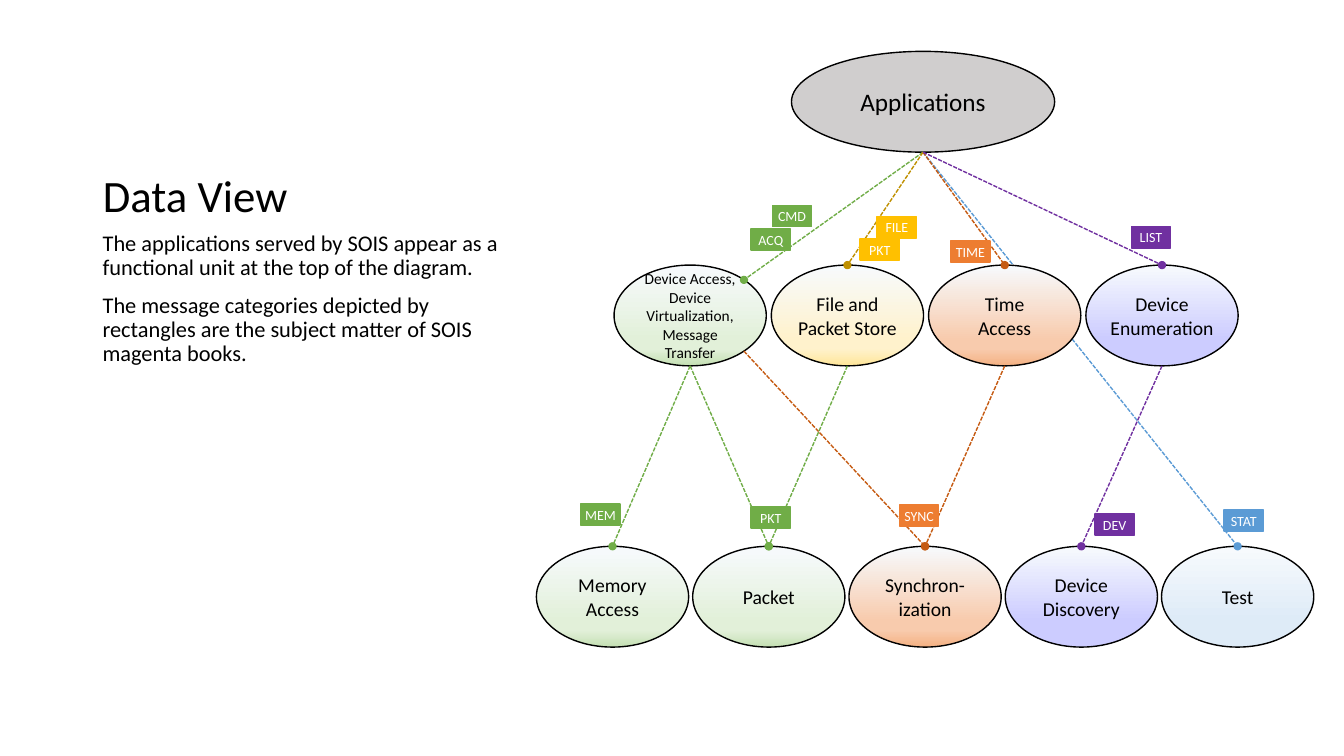
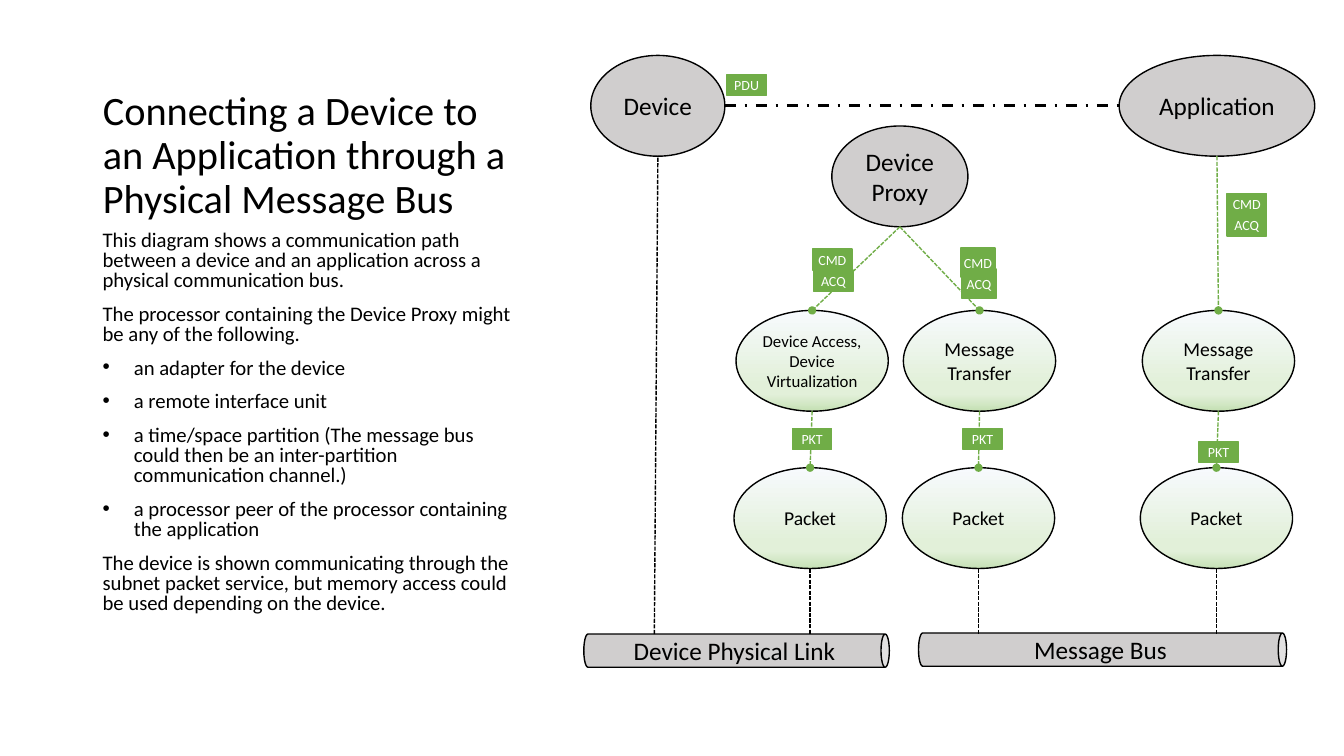
from dataclasses import dataclass, field

from lxml.etree import SubElement
from pptx import Presentation
from pptx.dml.color import RGBColor
from pptx.enum.dml import MSO_LINE
from pptx.enum.shapes import MSO_CONNECTOR, MSO_SHAPE
from pptx.enum.text import MSO_ANCHOR, MSO_AUTO_SIZE, PP_ALIGN
from pptx.oxml.ns import qn
from pptx.util import Inches, Pt


@dataclass(frozen=True)
class Theme:
    """Colours, type sizes and shared measures of the slides."""

    font: str = "Calibri"
    black: str = "000000"
    white: str = "FFFFFF"
    grey: str = "D0CECE"
    green: str = "70AD47"
    gold: str = "FFC000"
    dark_gold: str = "BF9000"
    orange: str = "ED7D31"
    rust: str = "C55A11"
    purple: str = "7030A0"
    blue: str = "5B9BD5"
    node_top: str = "F7FAFD"
    node_tints: dict = field(default_factory=lambda: {
        "green": ("E2F0D9", "C5E0B4"),
        "gold": ("FFF2CC", "FFE699"),
        "orange": ("F8CBAD", "F4B183"),
        "purple": ("CCCCFF", "CCCCFF"),
        "blue": ("DEEBF7", "DEEBF7"),
    })
    actor_size: float = 18
    node_size: float = 14
    tag_size: float = 10
    node_width: float = 1.51
    node_height: float = 1.0
    tag_box: tuple = (0.39, 0.21)
    pipe_height: float = 0.33
    bullet_indent: float = 0.31


THEME = Theme()
SITES = {
    "top": (0.5, 0), "bottom": (0.5, 1), "left": (0, 0.5), "right": (1, 0.5),
    "top right": (0.8536, 0.1464), "bottom right": (0.8536, 0.8536),
}


def apply(target, values):
    """Set every attribute named in a dict of format values."""
    for name, value in values.items():
        setattr(target, name, value)


def write(paragraph, text, size, color, **layout):
    """Put one formatted run into a paragraph."""
    run = paragraph.add_run()
    run.text = text
    apply(run.font, {"name": THEME.font, "size": Pt(size), "bold": False})
    run.font.color.rgb = RGBColor.from_string(color)
    apply(paragraph, layout)


def add_label(shape, text, size, color, inset):
    """Centre a label inside a shape."""
    frame = shape.text_frame
    apply(frame, {
        "word_wrap": True, "vertical_anchor": MSO_ANCHOR.MIDDLE,
        "margin_left": Inches(inset), "margin_right": Inches(inset),
    })
    write(frame.paragraphs[0], text, size, color, alignment=PP_ALIGN.CENTER)


def add_form(slide, kind, box, fill, outline):
    """Add a flat preset shape with a one point outline."""
    form = slide.shapes.add_shape(kind, *(Inches(length) for length in box))
    form.shadow.inherit = False
    form.fill.solid()
    form.fill.fore_color.rgb = RGBColor.from_string(fill)
    form.line.color.rgb = RGBColor.from_string(outline)
    form.line.width = Pt(1)
    return form


def add_actor(slide, text, left, top, width):
    """Add a grey ellipse for an application or a device."""
    actor = add_form(slide, MSO_SHAPE.OVAL, (left, top, width, THEME.node_height),
                     THEME.grey, THEME.black)
    add_label(actor, text, THEME.actor_size, THEME.black, 0.1)
    return actor


def add_node(slide, text, left, top, tint, size=THEME.node_size, inset=0):
    """Add a service ellipse with a vertical gradient."""
    box = (left, top, THEME.node_width, THEME.node_height)
    node = add_form(slide, MSO_SHAPE.OVAL, box, THEME.node_top, THEME.black)
    node.fill.gradient()
    node.fill.gradient_angle = 270
    stops = node.element.spPr.find(".//" + qn("a:gsLst"))
    stops.clear()
    middle, end = THEME.node_tints[tint]
    for percent, color in ((0, THEME.node_top), (74, middle), (83, middle), (100, end)):
        stop = SubElement(stops, qn("a:gs"), pos=str(percent * 1000))
        SubElement(stop, qn("a:srgbClr"), val=color)
    add_label(node, text, size, THEME.black, inset)
    return node


def add_tag(slide, text, left, top, color, box=THEME.tag_box):
    """Add a small rectangle that names a message category."""
    tag = add_form(slide, MSO_SHAPE.RECTANGLE, (left, top, *box), color, color)
    add_label(tag, text, THEME.tag_size, THEME.white, 0)


def add_pipe(slide, text, left, top, length):
    """Add a lying cylinder with upright text."""
    height = THEME.pipe_height
    box = (left + (length - height) / 2, top - (length - height) / 2, height, length)
    pipe = add_form(slide, MSO_SHAPE.CAN, box, THEME.grey, THEME.black)
    pipe.rotation = 90
    add_label(pipe, text, THEME.actor_size, THEME.black, 0.1)
    pipe.element.txBody.bodyPr.set("vert", "vert270")


def site(shape, name):
    """Return a named point on the outline of an ellipse."""
    across, down = SITES[name]
    return (round(shape.left + across * shape.width),
            round(shape.top + down * shape.height))


def add_link(slide, start, end, color, dot=True, dash=MSO_LINE.SQUARE_DOT, width=1):
    """Add a dashed line that may end in a dot."""
    link = slide.shapes.add_connector(MSO_CONNECTOR.STRAIGHT, *start, *end)
    link.line.color.rgb = RGBColor.from_string(color)
    apply(link.line, {"width": Pt(width), "dash_style": dash})
    properties = link.element.spPr
    if dot:
        SubElement(properties.find(qn("a:ln")), qn("a:tailEnd"), type="oval")
    SubElement(properties, qn("a:effectLst"))


def add_bullet(paragraph):
    """Give a paragraph a hanging bullet."""
    properties = paragraph._p.get_or_add_pPr()
    indent = Inches(THEME.bullet_indent)
    properties.set("marL", str(indent))
    properties.set("indent", str(-indent))
    SubElement(properties, qn("a:buFont"), typeface="Arial")
    SubElement(properties, qn("a:buChar"), char="•")


def start_slide(deck, heading, heading_size, body, body_size, spacing):
    """Add a slide with its title and the text column on the left."""
    slide = deck.slides.add_slide(deck.slide_layouts[5])
    title = slide.shapes.title
    apply(title, {"left": Inches(0.92), "top": Inches(0.5),
                  "width": Inches(4.3), "height": Inches(1.75)})
    apply(title.text_frame, {"word_wrap": True, "auto_size": MSO_AUTO_SIZE.NONE,
                             "vertical_anchor": MSO_ANCHOR.BOTTOM})
    write(title.text_frame.paragraphs[0], heading, heading_size, THEME.black,
          alignment=PP_ALIGN.LEFT, line_spacing=0.9)

    column = slide.shapes.add_textbox(Inches(0.92), Inches(2.25), Inches(4.3), Inches(4.17))
    frame = column.text_frame
    frame.word_wrap = True
    for index, (text, bulleted) in enumerate(body):
        paragraph = frame.add_paragraph() if index else frame.paragraphs[0]
        write(paragraph, text, body_size, THEME.black,
              line_spacing=spacing, space_before=Pt(10))
        if bulleted:
            add_bullet(paragraph)
    return slide


def build_data_view(deck):
    """Build the slide on services and their message categories."""
    slide = start_slide(deck, "Data View", 32, [
        ("The applications served by SOIS appear as a functional unit "
         "at the top of the diagram.", False),
        ("The message categories depicted by rectangles are the subject matter "
         "of SOIS magenta books.", False),
    ], 16, 0.9)
    subnet_left, subnet_top, subnet_pitch = 5.32, 5.42, 1.55
    service_left, service_top, service_pitch = 6.09, 2.63, 1.56

    test = add_node(slide, "Test", subnet_left + 4 * subnet_pitch, subnet_top, "blue")
    applications = add_actor(slide, "Applications", 7.85, 0.51, 2.61)
    source = site(applications, "bottom")
    add_link(slide, source, site(test, "top"), THEME.blue)

    services = [
        add_node(slide, text, service_left + column * service_pitch, service_top,
                 tint, size, inset)
        for column, (text, tint, size, inset) in enumerate([
            ("Device Access, Device Virtualization, Message Transfer", "green", 11, 0),
            ("File and Packet Store", "gold", THEME.node_size, 0),
            ("Time Access", "orange", THEME.node_size, 0.1),
            ("Device Enumeration", "purple", THEME.node_size, 0),
        ])
    ]
    subnets = [
        add_node(slide, text, subnet_left + column * subnet_pitch, subnet_top, tint)
        for column, (text, tint) in enumerate([
            ("Memory Access", "green"), ("Packet", "green"),
            ("Synchron-ization", "orange"), ("Device Discovery", "purple"),
        ])
    ]
    access, store, time, enumeration = services
    memory, packet, synchronization, discovery = subnets

    for service, end, color in [
        (time, "top", THEME.rust), (access, "top right", THEME.green),
        (store, "top", THEME.dark_gold), (enumeration, "top", THEME.purple),
    ]:
        add_link(slide, source, site(service, end), color)
    for service, start, subnet, color in [
        (time, "bottom", synchronization, THEME.rust),
        (access, "bottom right", synchronization, THEME.rust),
        (access, "bottom", memory, THEME.green),
        (access, "bottom", packet, THEME.green),
        (store, "bottom", packet, THEME.green),
        (enumeration, "bottom", discovery, THEME.purple),
    ]:
        add_link(slide, site(service, start), site(subnet, "top"), color)

    for text, left, top, color in [
        ("FILE", 8.7, 2.15, THEME.gold), ("TIME", 9.43, 2.39, THEME.orange),
        ("SYNC", 8.92, 5.01, THEME.orange), ("LIST", 11.22, 2.25, THEME.purple),
        ("DEV", 10.86, 5.1, THEME.purple), ("STAT", 12.14, 5.06, THEME.blue),
        ("PKT", 7.45, 5.03, THEME.green), ("MEM", 5.76, 5, THEME.green),
        ("CMD", 7.66, 2.04, THEME.green), ("ACQ", 7.45, 2.27, THEME.green),
        ("PKT", 8.53, 2.37, THEME.gold),
    ]:
        add_tag(slide, text, left, top, color)


def build_message_bus(deck):
    """Build the slide on the path from a device to an application."""
    slide = start_slide(
        deck, "Connecting a Device to an Application through a Physical Message Bus", 28.8, [
            ("This diagram shows a communication path between a device and an "
             "application across a physical communication bus.", False),
            ("The processor containing the Device Proxy might be any of the following.", False),
            ("an adapter for the device", True),
            ("a remote interface unit", True),
            ("a time/space partition (The message bus could then be an "
             "inter-partition communication channel.)", True),
            ("a processor peer of the processor containing the application", True),
            ("The device is shown communicating through the subnet packet service, "
             "but memory access could be used depending on the device.", False),
        ], 14.8, 0.8)
    pipe_top = 6.29
    device = add_actor(slide, "Device", 5.86, 0.55, 1.33)
    proxy = add_actor(slide, "Device Proxy", 8.25, 1.25, 1.35)
    application = add_actor(slide, "Application", 11.1, 0.55, 1.94)
    add_pipe(slide, "Device Physical Link", 5.79, pipe_top, 3.03)
    add_pipe(slide, "Message Bus", 9.11, 6.28, 3.65)

    for actor, text, size, service_left, packet_left in [
        (proxy, "Device Access, Device Virtualization", 12, 7.3, 7.28),
        (proxy, "Message Transfer", THEME.node_size, 8.96, 8.95),
        (application, "Message Transfer", THEME.node_size, 11.33, 11.31),
    ]:
        service = add_node(slide, text, service_left, 3.08, "green", size)
        packet = add_node(slide, "Packet", packet_left, 4.64, "green")
        add_link(slide, site(actor, "bottom"), site(service, "top"), THEME.green)
        add_link(slide, site(service, "bottom"), site(packet, "top"), THEME.green)
        foot = site(packet, "bottom")
        add_link(slide, foot, (foot[0], Inches(pipe_top)), THEME.black, dot=False)

    add_link(slide, (Inches(6.49), Inches(pipe_top)), site(device, "bottom"),
             THEME.black, dot=False)
    add_link(slide, site(device, "right"), site(application, "left"),
             THEME.black, dot=False, dash=MSO_LINE.DASH_DOT, width=2)

    for text, left, top in [
        ("PDU", 7.21, 0.74), ("PKT", 7.86, 4.25), ("PKT", 9.55, 4.25), ("PKT", 11.89, 4.38),
        ("CMD", 8.06, 2.47), ("ACQ", 8.07, 2.68), ("CMD", 12.17, 1.92), ("ACQ", 12.17, 2.13),
    ]:
        add_tag(slide, text, left, top, THEME.green)
    for text, left, top in [("CMD", 9.53, 2.46), ("ACQ", 9.54, 2.67)]:
        add_tag(slide, text, left, top, THEME.green, (0.34, 0.29))


def main():
    """Build both slides and save the deck."""
    deck = Presentation()
    apply(deck, {"slide_width": Inches(13.33), "slide_height": Inches(7.5)})
    build_data_view(deck)
    build_message_bus(deck)
    deck.save("out.pptx")


if __name__ == "__main__":
    main()
